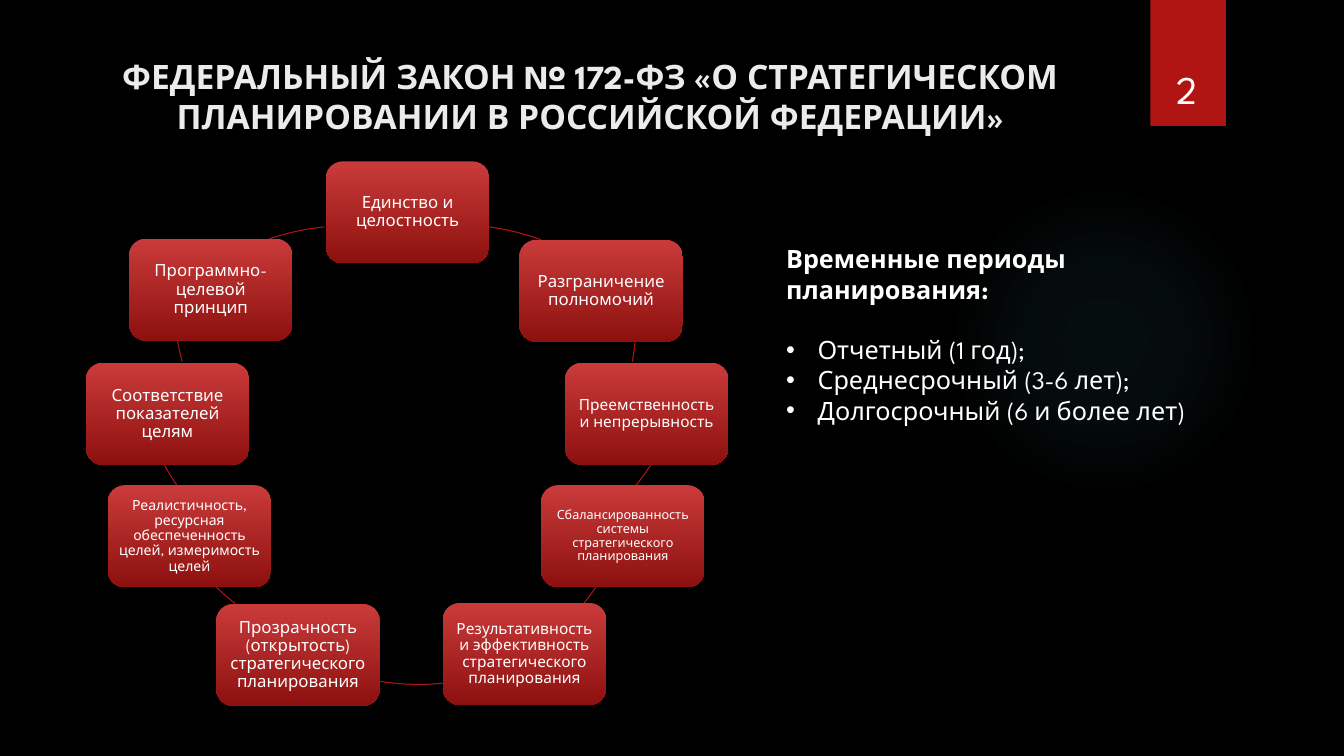
"""Build the slide on the principles and periods of strategic planning."""
import pptx
import pptx.dml.color
import pptx.enum.shapes
import pptx.enum.text
import pptx.oxml
import pptx.oxml.ns
import pptx.util

Pt = pptx.util.Pt
RGBColor = pptx.dml.color.RGBColor
SHAPE = pptx.enum.shapes.MSO_SHAPE
ANCHOR = pptx.enum.text.MSO_ANCHOR
ALIGN = pptx.enum.text.PP_ALIGN

FONT = "League Spartan"
BLACK = RGBColor(0x00, 0x00, 0x00)
WHITE = RGBColor(0xFF, 0xFF, 0xFF)
LIGHT = RGBColor(0xEB, 0xEB, 0xEB)
RED = RGBColor(0xB0, 0x15, 0x13)
CARD_TOP = RGBColor(0xC9, 0x3B, 0x3A)
CARD_BOTTOM = RGBColor(0x8D, 0x11, 0x0F)
GLOW = RGBColor(0x50, 0xB9, 0xC1)
GLOW_STOPS = [(0, 7), (36, 6), (69, 0)]

CARD_WIDTH, CARD_HEIGHT = 116.8, 73
CIRCLE_SIZE = 347.8

TITLE = "ФЕДЕРАЛЬНЫЙ ЗАКОН № 172-ФЗ «О СТРАТЕГИЧЕСКОМ ПЛАНИРОВАНИИ В РОССИЙСКОЙ ФЕДЕРАЦИИ»"
PRINCIPLES = [
    ("Единство и целостность", 12, 232.8, 115.2),
    ("Разграничение полномочий", 12, 371, 171.2),
    ("Преемственность и непрерывность", 11, 403.6, 259),
    ("Сбалансированность системы стратегического планирования", 9, 386.5, 346.5),
    ("Результативность и эффективность стратегического планирования", 11, 316.3, 430.6),
    ("Прозрачность (открытость) стратегического планирования", 12, 154.5, 431.3),
    ("Реалистичность, ресурсная обеспеченность целей, измеримость целей", 10, 77, 346.5),
    ("Соответствие показателей целям", 12, 61.3, 259),
    ("Программно-целевой принцип", 12, 92.2, 170.4),
]
ARCS = [
    (152.6, 160.6, 277.5, 290.2),
    (106.6, 54, 5.3, 10.1),
    (144.7, 64.1, 32.8, 38.8),
    (108, 147.6, 34.2, 38.9),
    (125.3, 141.1, 84.4, 99.2),
    (102.2, 121, 128.5, 134.5),
    (95.8, 74.2, 145.6, 151.1),
    (123.8, 37.4, 164.3, 169.4),
    (74.9, 161.3, 251.1, 264.4),
]
PERIODS = ["Отчетный (1 год);", "Среднесрочный (3-6 лет);", "Долгосрочный (6 и более лет)"]


def add_span(para, text, size, color=WHITE, bold=False):
    span = para.add_run()
    span.text = text
    span.font.name = FONT
    span.font.size = Pt(size)
    span.font.bold = bold
    span.font.color.rgb = color


def add_plain_shape(page, kind, left, top, width, height):
    shape = page.shapes.add_shape(kind, Pt(left), Pt(top), Pt(width), Pt(height))
    shape.shadow.inherit = False
    shape.line.fill.background()
    return shape


def add_glow(page):
    glow = add_plain_shape(page, SHAPE.OVAL, 677.5, 131.8, 221.8, 221.8)
    stops = "".join(
        f'<a:gs pos="{position * 1000}"><a:srgbClr val="{GLOW}">'
        f'<a:alpha val="{alpha * 1000}"/></a:srgbClr></a:gs>'
        for position, alpha in GLOW_STOPS
    )
    gradient = pptx.oxml.parse_xml(
        f'<a:gradFill {pptx.oxml.ns.nsdecls("a")}><a:gsLst>{stops}</a:gsLst>'
        '<a:path path="circle"><a:fillToRect l="50000" t="50000" r="50000" b="50000"/>'
        '</a:path></a:gradFill>'
    )
    glow._element.spPr.insert(2, gradient)


def add_title(page):
    title = page.shapes.title
    title.left, title.top, title.width, title.height = Pt(51), Pt(36), Pt(741), Pt(70.5)
    frame = title.text_frame
    frame.word_wrap = True
    frame.auto_size = pptx.enum.text.MSO_AUTO_SIZE.NONE
    frame.vertical_anchor = ANCHOR.TOP
    para = frame.paragraphs[0]
    para.alignment = ALIGN.CENTER
    add_span(para, TITLE, 24, LIGHT, True)


def add_page_number(page, number):
    flag = add_plain_shape(page, SHAPE.RECTANGLE, 821.7, 0, 54, 90)
    flag.fill.solid()
    flag.fill.fore_color.rgb = RED
    box = page.shapes.add_textbox(Pt(815), Pt(23), Pt(66), Pt(60.5))
    frame = box.text_frame
    frame.word_wrap = True
    frame.vertical_anchor = ANCHOR.BOTTOM
    para = frame.paragraphs[0]
    para.alignment = ALIGN.CENTER
    add_span(para, number, 28)


def add_card(page, text, size, left, top):
    card = add_plain_shape(page, SHAPE.ROUNDED_RECTANGLE, left, top, CARD_WIDTH, CARD_HEIGHT)
    card.fill.gradient()
    card.fill.gradient_angle = 270
    for stop, color in zip(card.fill.gradient_stops, (CARD_TOP, CARD_BOTTOM)):
        stop.color.rgb = color
    frame = card.text_frame
    frame.word_wrap = True
    frame.vertical_anchor = ANCHOR.MIDDLE
    frame.margin_left = frame.margin_right = Pt(3.4)
    frame.margin_top = frame.margin_bottom = Pt(3.4)
    para = frame.paragraphs[0]
    para.alignment = ALIGN.CENTER
    para.line_spacing = 0.9
    add_span(para, text, size)


def add_arc(page, left, top, start, end):
    arc = add_plain_shape(page, SHAPE.ARC, left, top, CIRCLE_SIZE, CIRCLE_SIZE)
    for index, degrees in enumerate((start, end)):
        arc.adjustments[index] = degrees * 0.6
    arc.fill.background()
    arc.line.color.rgb = RED
    arc.line.width = Pt(0.75)


def add_bullet(para):
    properties = para._p.get_or_add_pPr()
    properties.set("marL", str(Pt(22.5)))
    properties.set("indent", str(-Pt(22.5)))
    namespace = pptx.oxml.ns.nsdecls("a")
    properties.append(pptx.oxml.parse_xml(f'<a:buFont {namespace} typeface="Arial"/>'))
    properties.append(pptx.oxml.parse_xml(f'<a:buChar {namespace} char="•"/>'))


def add_periods(page):
    box = page.shapes.add_textbox(Pt(554.4), Pt(170.6), Pt(350), Pt(116.6))
    frame = box.text_frame
    frame.word_wrap = True
    add_span(frame.paragraphs[0], "Временные периоды планирования:", 18, bold=True)
    for index, period in enumerate(PERIODS):
        para = frame.add_paragraph()
        if index == 0:
            para.space_before = Pt(21.6)
        add_bullet(para)
        add_span(para, period, 18)


def main():
    deck = pptx.Presentation()
    deck.slide_width, deck.slide_height = Pt(960), Pt(540)
    page = deck.slides.add_slide(deck.slide_layouts[5])
    page.background.fill.solid()
    page.background.fill.fore_color.rgb = BLACK
    add_glow(page)
    add_title(page)
    add_page_number(page, "2")
    for arc in ARCS:
        add_arc(page, *arc)
    for principle in PRINCIPLES:
        add_card(page, *principle)
    add_periods(page)
    deck.save("out.pptx")


if __name__ == "__main__":
    main()
